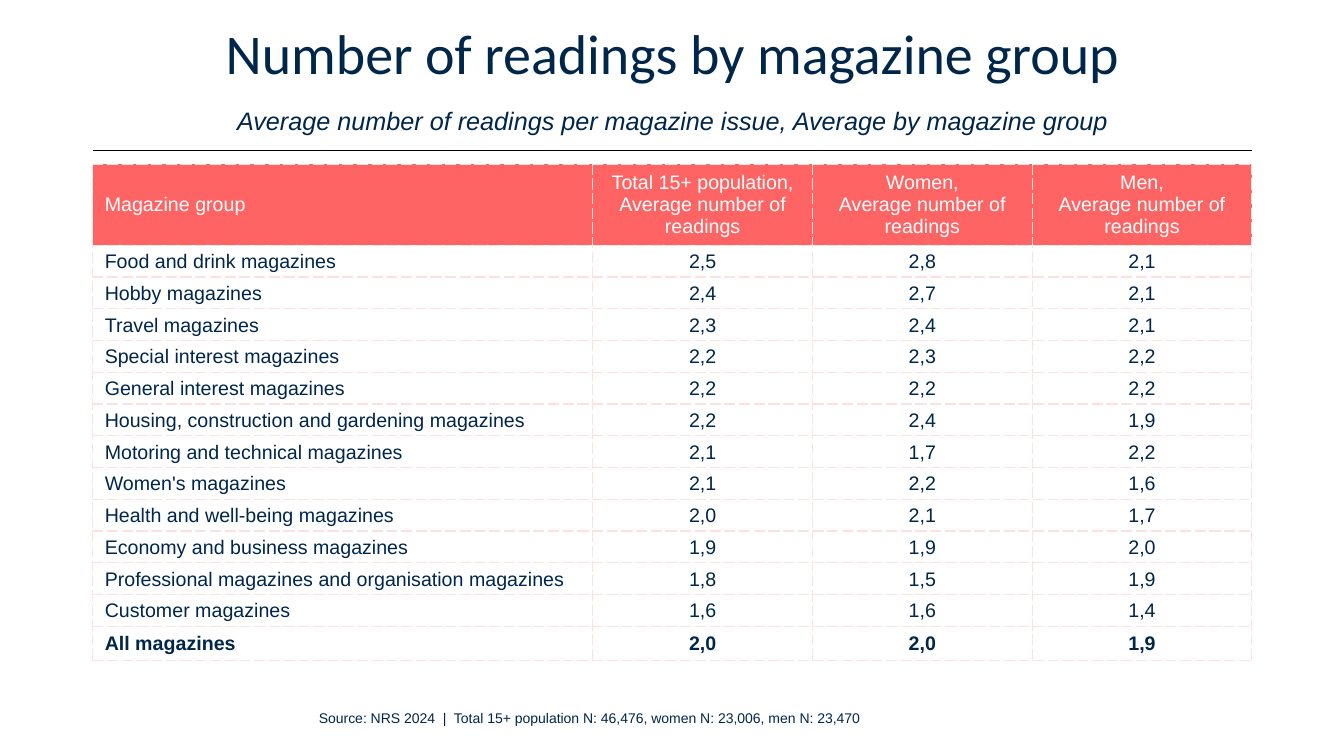
from lxml.etree import SubElement
from pptx import Presentation
from pptx.dml.color import RGBColor
from pptx.enum.shapes import MSO_CONNECTOR
from pptx.enum.text import MSO_ANCHOR, MSO_AUTO_SIZE, PP_ALIGN
from pptx.oxml import parse_xml
from pptx.oxml.ns import nsdecls, qn
from pptx.util import Cm, Pt

COLOURS = {
    "navy": "002649",
    "coral": "FF6464",
    "pink": "FFE0E0",
    "white": "FFFFFF",
    "black": "000000",
}
TITLE = "Number of readings by magazine group"
SUBTITLE = "Average number of readings per magazine issue, Average by magazine group"
SOURCE = "Source: NRS 2024  |  Total 15+ population N: 46,476, women N: 23,006, men N: 23,470"
HEADINGS = [
    "Magazine group",
    "Total 15+ population, Average number of readings",
    "Women,\nAverage number of readings",
    "Men,\nAverage number of readings",
]
READINGS = [
    ("Food and drink magazines", "2,5", "2,8", "2,1"),
    ("Hobby magazines", "2,4", "2,7", "2,1"),
    ("Travel magazines", "2,3", "2,4", "2,1"),
    ("Special interest magazines", "2,2", "2,3", "2,2"),
    ("General interest magazines", "2,2", "2,2", "2,2"),
    ("Housing, construction and gardening magazines", "2,2", "2,4", "1,9"),
    ("Motoring and technical magazines", "2,1", "1,7", "2,2"),
    ("Women's magazines", "2,1", "2,2", "1,6"),
    ("Health and well-being magazines", "2,0", "2,1", "1,7"),
    ("Economy and business magazines", "1,9", "1,9", "2,0"),
    ("Professional magazines and organisation magazines", "1,8", "1,5", "1,9"),
    ("Customer magazines", "1,6", "1,6", "1,4"),
    ("All magazines", "2,0", "2,0", "1,9"),
]


def colour(name):
    return RGBColor.from_string(COLOURS[name])


def format_span(span, size, colour_name, typeface="Arial", bold=False, italic=False):
    span.font.name = typeface
    span.font.size = Pt(size)
    span.font.bold = bold
    span.font.italic = italic
    span.font.color.rgb = colour(colour_name)


def place(shape, box):
    shape.left, shape.top, shape.width, shape.height = (Cm(length) for length in box)


def add_heading(page, box):
    title = page.shapes.title
    place(title, box)
    frame = title.text_frame
    frame.auto_size = MSO_AUTO_SIZE.NONE
    frame.word_wrap = True
    frame.vertical_anchor = MSO_ANCHOR.MIDDLE
    para = frame.paragraphs[0]
    para.text = f"{TITLE}\v{SUBTITLE}"
    para.alignment = PP_ALIGN.CENTER
    para.line_spacing = Pt(35)
    para.space_after = Pt(18)
    heading, subheading = para.runs
    format_span(heading, 40, "navy", "Calibri")
    format_span(subheading, 18, "navy", italic=True)


def add_rule(page, box):
    left, top, width, height = box
    rule = page.shapes.add_connector(
        MSO_CONNECTOR.STRAIGHT, Cm(left), Cm(top), Cm(left + width), Cm(top + height)
    )
    rule.line.color.rgb = colour("black")
    rule.line.width = Pt(1)
    SubElement(rule._element.spPr, qn("a:effectLst"))


def add_borders(cell):
    properties = cell._tc.get_or_add_tcPr()
    for position, side in enumerate("LRTB"):
        border = parse_xml(
            f'<a:ln{side} {nsdecls("a")} w="12700"><a:solidFill>'
            f'<a:srgbClr val="{COLOURS["pink"]}"/></a:solidFill>'
            f'<a:prstDash val="sysDash"/></a:ln{side}>'
        )
        properties.insert(position, border)


def fill_cell(cell, text, is_label, is_heading, is_total):
    cell.text_frame.text = text
    cell.vertical_anchor = MSO_ANCHOR.MIDDLE
    roomy = is_heading or (is_total and not is_label)
    cell.margin_left = Cm(0.3 if roomy or is_label else 0.03)
    cell.margin_right = Cm(0.3 if roomy else 0.03)
    cell.margin_top = Cm(0.13 if roomy else 0.03)
    cell.margin_bottom = Cm(0.13 if roomy else 0)
    if is_heading:
        cell.fill.solid()
        cell.fill.fore_color.rgb = colour("coral")
    else:
        cell.fill.background()
    add_borders(cell)
    for para in cell.text_frame.paragraphs:
        para.alignment = PP_ALIGN.LEFT if is_label else PP_ALIGN.CENTER
        for span in para.runs:
            format_span(span, 14, "white" if is_heading else "navy", bold=is_total)


def add_readings_table(page, box):
    left, top, width, height = box
    rows = [HEADINGS, *READINGS]
    label_width, heading_height = 12.6, 1.92
    value_width = (width - label_width) / (len(HEADINGS) - 1)
    row_height = (height - heading_height) / len(READINGS)
    table = page.shapes.add_table(
        len(rows), len(HEADINGS), Cm(left), Cm(top), Cm(width), Cm(height)
    ).table
    table.first_row = False
    table.horz_banding = False
    for index, column in enumerate(table.columns):
        column.width = Cm(value_width if index else label_width)
    for index, row in enumerate(table.rows):
        row.height = Cm(row_height if index else heading_height)
        for position, text in enumerate(rows[index]):
            fill_cell(
                row.cells[position], text, position == 0, index == 0, index == len(READINGS)
            )


def add_source(page, box):
    source = page.shapes.add_textbox(*(Cm(length) for length in box))
    frame = source.text_frame
    frame.word_wrap = True
    frame.text = SOURCE
    para = frame.paragraphs[0]
    para.alignment = PP_ALIGN.CENTER
    format_span(para.runs[0], 10, "navy")


def build_page(deck):
    page = deck.slides.add_slide(deck.slide_layouts[5])
    left, width = 2.34, 29.21
    add_rule(page, (left, 3.8, width, 0))
    add_source(page, (6.38, 17.75, 16.94, 0.69))
    add_heading(page, (left, 0.81, width, 2.72))
    add_readings_table(page, (left, 4.14, width, 12.32))


def main():
    deck = Presentation()
    deck.slide_width = Cm(33.87)
    deck.slide_height = Cm(19.05)
    build_page(deck)
    deck.save("out.pptx")


if __name__ == "__main__":
    main()
